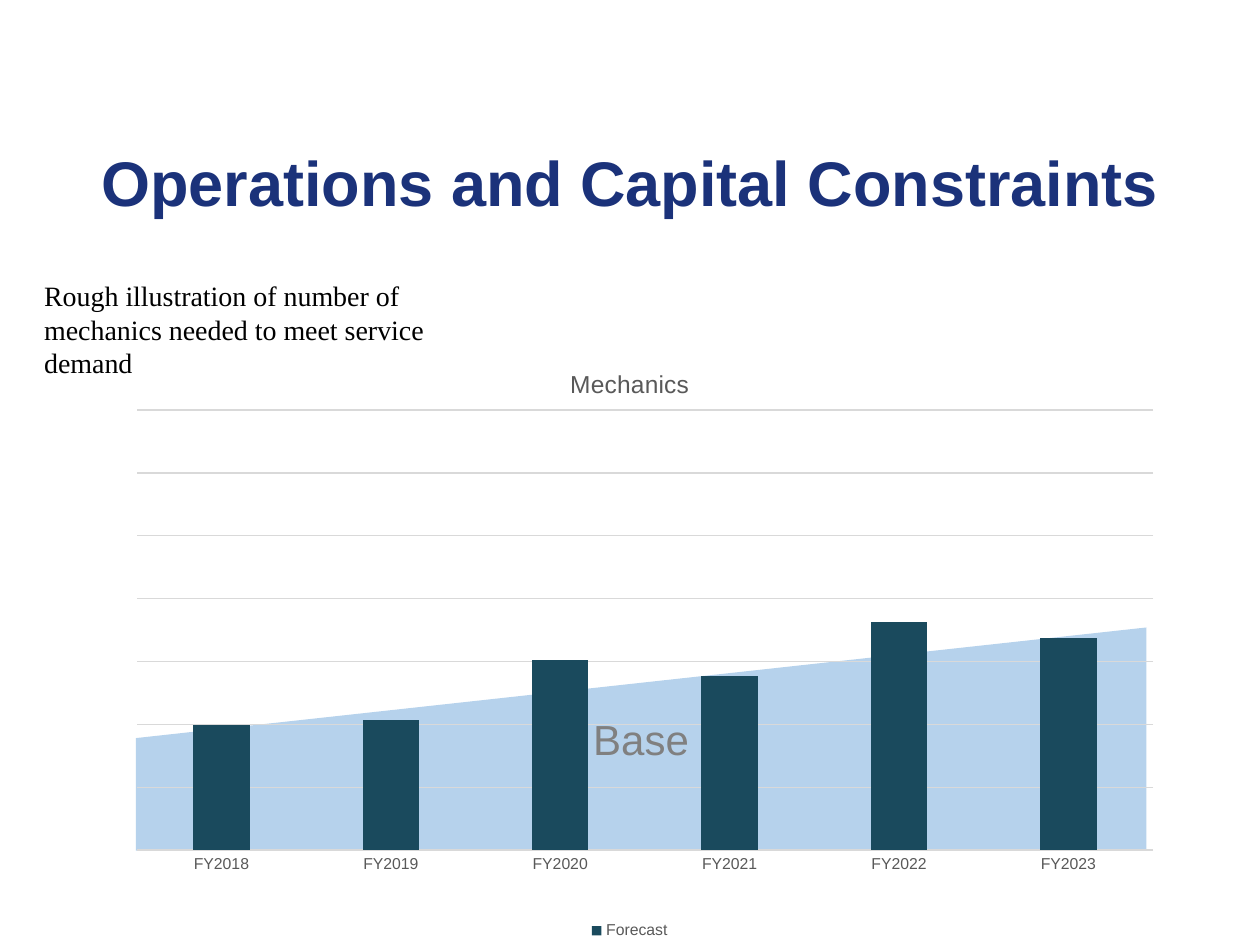
"""Build the slide on operations and capital constraints."""
from dataclasses import dataclass

from lxml import etree
from pptx import Presentation
from pptx import util as u
from pptx.chart.data import CategoryChartData
from pptx.dml.color import RGBColor
from pptx.enum import chart as ch
from pptx.enum import text as tx
from pptx.oxml import parse_xml
from pptx.oxml.ns import nsdecls, qn

GREY, RULE = "595959", "D9D9D9"
YEARS = [f"FY{year}" for year in range(2018, 2024)]
STAFF = (81, 82, 93, 90, 100, 97)
EDGE = ((2.74, 14.88), (23.11, 12.65), (23.11, 17.12), (2.74, 17.15))
PLOT = {"x": 0.046, "y": 0.108, "w": 0.936, "h": 0.734}


@dataclass
class Style:
    size: float
    color: str
    face: str = "Arial"
    bold: bool = False


@dataclass
class Area:
    left: float
    top: float
    width: float
    height: float

    def dims(self) -> list:
        return [u.Cm(v) for v in (self.left, self.top, self.width, self.height)]


def paint(fmt, color: str) -> None:
    fmt.solid()
    fmt.fore_color.rgb = RGBColor.from_string(color)


def set_font(font, style: Style) -> None:
    font.size, font.name, font.bold = u.Pt(style.size), style.face, style.bold
    paint(font.fill, style.color)


def rule(line) -> None:
    paint(line.fill, RULE)
    line.width = u.Pt(0.75)


def write(shape, words: str, style: Style, align, anchor) -> None:
    frame = shape.text_frame
    frame.text = words
    frame.word_wrap = True
    frame.auto_size = tx.MSO_AUTO_SIZE.NONE
    frame.vertical_anchor = anchor
    para = frame.paragraphs[0]
    para.alignment = align
    set_font(para.font, style)


def add_title(slide) -> None:
    title = slide.shapes.title
    title.left, title.top, title.width, title.height = Area(0, 2.59, 25.4, 2.11).dims()
    write(title, "Operations and Capital Constraints", Style(36, "1B327A", bold=True),
          tx.PP_ALIGN.CENTER, tx.MSO_ANCHOR.MIDDLE)


def add_base(slide) -> None:
    points = [(u.Cm(x), u.Cm(y)) for x, y in EDGE]
    pen = slide.shapes.build_freeform(*points[0])
    pen.add_line_segments(points[1:], close=True)
    base = pen.convert_to_shape()
    base.shadow.inherit = False
    paint(base.fill, "B6D2EC")
    base.line.fill.background()
    write(base, "Base", Style(24, "808080"), tx.PP_ALIGN.CENTER, tx.MSO_ANCHOR.MIDDLE)


def add_note(slide) -> None:
    note = slide.shapes.add_textbox(*Area(0.64, 5.49, 9.09, 2.31).dims())
    write(note, "Rough illustration of number of mechanics needed to meet service demand",
          Style(16, "000000", "Times New Roman"), tx.PP_ALIGN.LEFT, tx.MSO_ANCHOR.TOP)


def clear_fill():
    return parse_xml(f"<c:spPr {nsdecls('c', 'a')}><a:noFill/><a:ln><a:noFill/></a:ln></c:spPr>")


def fix_plot(chart) -> None:
    root = chart.element.find(qn("c:chart"))
    root.addnext(clear_fill())
    plot = root.find(qn("c:plotArea"))
    plot.append(clear_fill())
    for old in plot.findall(qn("c:layout")):
        plot.remove(old)
    layout = etree.Element(qn("c:layout"))
    manual = etree.SubElement(layout, qn("c:manualLayout"))
    parts = {"layoutTarget": "inner", "xMode": "edge", "yMode": "edge", **PLOT}
    for tag, val in parts.items():
        etree.SubElement(manual, qn(f"c:{tag}")).set("val", str(val))
    plot.insert(0, layout)


def add_chart(slide) -> None:
    data = CategoryChartData()
    data.categories = YEARS
    data.add_series("Forecast", STAFF)
    chart = slide.shapes.add_chart(ch.XL_CHART_TYPE.COLUMN_STACKED,
                                   *Area(1.75, 6.96, 21.89, 12.09).dims(), data).chart
    set_font(chart.font, Style(10, "000000"))
    chart.has_title = True
    chart.chart_title.include_in_layout = False
    head = chart.chart_title.text_frame
    head.text = "Mechanics"
    set_font(head.paragraphs[0].font, Style(14, GREY))

    small = Style(9, GREY)
    chart.has_legend = True
    chart.legend.position = ch.XL_LEGEND_POSITION.BOTTOM
    chart.legend.include_in_layout = False
    set_font(chart.legend.font, small)

    cats = chart.category_axis
    cats.major_tick_mark = cats.minor_tick_mark = ch.XL_TICK_MARK.NONE
    set_font(cats.tick_labels.font, small)
    rule(cats.format.line)

    vals = chart.value_axis
    vals.visible = False
    vals.minimum_scale, vals.maximum_scale, vals.major_unit = 58, 139, 11.57
    vals.has_major_gridlines = True
    rule(vals.major_gridlines.format.line)

    plot = chart.plots[0]
    plot.gap_width, plot.overlap, plot.vary_by_categories = 200, 100, False
    paint(plot.series[0].format.fill, "1A4A5D")
    fix_plot(chart)


def main() -> None:
    deck = Presentation()
    deck.slide_width, deck.slide_height = u.Cm(25.4), u.Cm(19.05)
    slide = deck.slides.add_slide(deck.slide_layouts[5])
    add_base(slide)
    add_note(slide)
    add_chart(slide)
    add_title(slide)
    deck.save("out.pptx")


if __name__ == "__main__":
    main()
